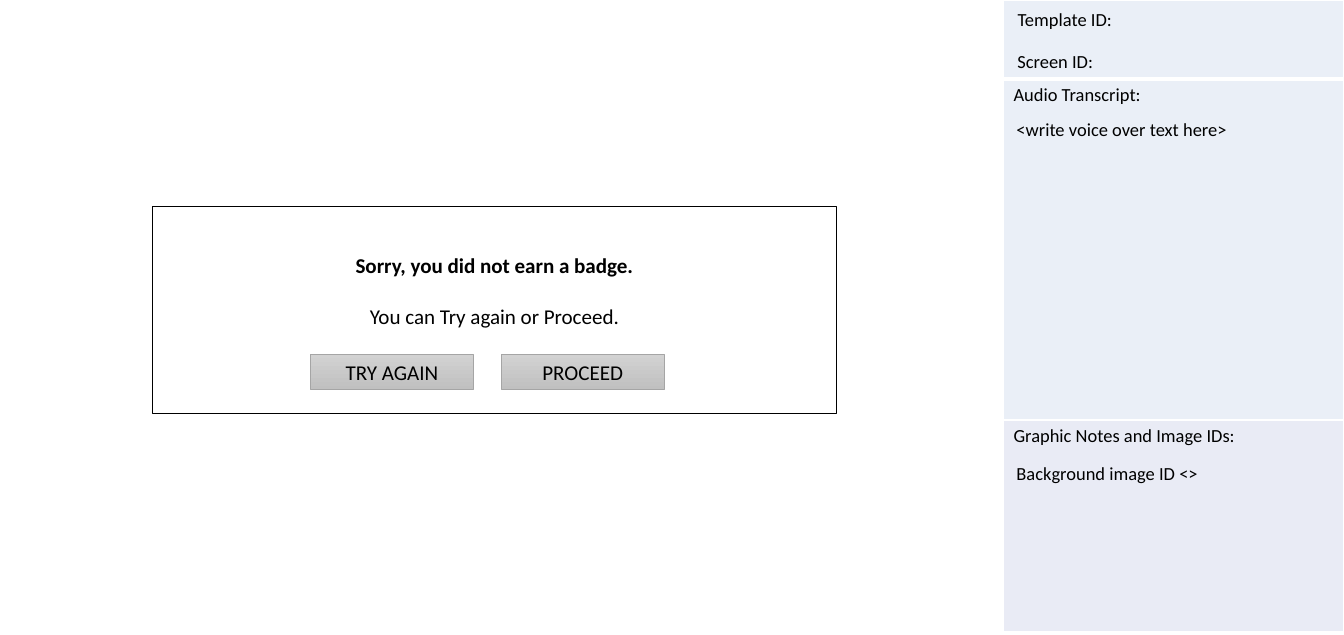
import pptx
import pptx.dml.color
import pptx.enum.shapes
import pptx.enum.text
import pptx.oxml
import pptx.oxml.ns
import pptx.util

BLACK = pptx.dml.color.RGBColor(0x00, 0x00, 0x00)
WHITE = pptx.dml.color.RGBColor(0xFF, 0xFF, 0xFF)
PALE_BLUE = pptx.dml.color.RGBColor(0xEA, 0xEF, 0xF7)
PALE_LAVENDER = pptx.dml.color.RGBColor(0xE9, 0xEB, 0xF5)
LIGHT_GREY = pptx.dml.color.RGBColor(0xD2, 0xD2, 0xD2)
MID_GREY = pptx.dml.color.RGBColor(0xC0, 0xC0, 0xC0)
EDGE_GREY = pptx.dml.color.RGBColor(0xA5, 0xA5, 0xA5)

Pt = pptx.util.Pt
CENTER = pptx.enum.text.PP_ALIGN.CENTER
TOP = pptx.enum.text.MSO_ANCHOR.TOP
MIDDLE = pptx.enum.text.MSO_ANCHOR.MIDDLE


def write_text(paragraph, text, size=14, bold=False, align=None, before=0, font="Calibri"):
    paragraph.alignment = align
    paragraph.space_before = Pt(before)
    run = paragraph.add_run()
    run.text = text
    run.font.name = font
    run.font.size = Pt(size)
    run.font.bold = bold
    run.font.color.rgb = BLACK


class Storyboard:
    text_size = 16
    label_size = 14
    border = 1

    def __init__(self, slide):
        self.slide = slide

    def label(self, text, left, top, width):
        box = self.slide.shapes.add_textbox(Pt(left), Pt(top), Pt(width), Pt(24.5))
        box.text_frame.word_wrap = True
        write_text(box.text_frame.paragraphs[0], text, size=self.label_size)

    def rectangle(self, left, top, width, height, line_color, line_width):
        shape = self.slide.shapes.add_shape(
            pptx.enum.shapes.MSO_SHAPE.RECTANGLE, Pt(left), Pt(top), Pt(width), Pt(height))
        shape.shadow.inherit = False
        shape.line.color.rgb = line_color
        shape.line.width = Pt(line_width)
        shape.text_frame.word_wrap = True
        return shape

    def message(self, left, top, width, height, heading, body):
        shape = self.rectangle(left, top, width, height, BLACK, self.border)
        shape.fill.solid()
        shape.fill.fore_color.rgb = WHITE
        frame = shape.text_frame
        frame.vertical_anchor = TOP
        frame.margin_left = frame.margin_right = frame.margin_bottom = Pt(15)
        frame.margin_top = Pt(34.6)
        write_text(frame.paragraphs[0], heading, size=self.text_size, bold=True, align=CENTER)
        write_text(frame.add_paragraph(), body, size=self.text_size, align=CENTER, before=19.5)

    def button(self, text, left, top, width, height):
        shape = self.rectangle(left, top, width, height, EDGE_GREY, 0.5)
        shape.fill.gradient()
        shape.fill.gradient_angle = 270
        for stop, color in zip(shape.fill.gradient_stops, (LIGHT_GREY, MID_GREY)):
            stop.color.rgb = color
        frame = shape.text_frame
        frame.vertical_anchor = MIDDLE
        frame.margin_left = frame.margin_right = 0
        write_text(frame.paragraphs[0], text, size=self.text_size, align=CENTER)

    def cell_borders(self, cell, widths):
        properties = cell._tc.get_or_add_tcPr()
        for side, width in zip("LRTB", widths):
            properties.append(pptx.oxml.parse_xml(
                f'<a:ln{side} {pptx.oxml.ns.nsdecls("a")} w="{Pt(width)}"><a:solidFill>'
                f'<a:srgbClr val="{WHITE}"/></a:solidFill></a:ln{side}>'))

    def side_table(self, left, top, width, rows):
        height = sum(row_height for row_height, _, _ in rows)
        table = self.slide.shapes.add_table(
            len(rows), 1, Pt(left), Pt(top), Pt(width), Pt(height)).table
        table.first_row = False
        table.horz_banding = False
        for index, (row_height, text, color) in enumerate(rows):
            table.rows[index].height = Pt(row_height)
            cell = table.cell(index, 0)
            above = 3 if index == 1 else self.border
            below = 3 if index == 0 else self.border
            self.cell_borders(cell, (self.border, self.border, above, below))
            cell.fill.solid()
            cell.fill.fore_color.rgb = color
            cell.margin_left = cell.margin_right = Pt(7.6)
            if text:
                write_text(cell.text_frame.paragraphs[0], text, size=self.label_size)


def main():
    presentation = pptx.Presentation()
    presentation.slide_width = Pt(1020.24)
    presentation.slide_height = Pt(481.68)
    storyboard = Storyboard(presentation.slides.add_slide(presentation.slide_layouts[6]))

    storyboard.side_table(761.8, 0, 258.4, (
        (59.8, "", PALE_BLUE),
        (258.8, "Audio Transcript:", PALE_BLUE),
        (160.8, "Graphic Notes and Image IDs:", PALE_LAVENDER),
    ))
    for text, left, top in (
        ("Screen ID:", 765.2, 34.6),
        ("Template ID:", 765.4, 2.9),
        ("<write voice over text here>", 764.5, 86),
        ("Background image ID <>", 764.5, 347.3),
    ):
        storyboard.label(text, left, top, 254.8)

    storyboard.message(115.8, 156.9, 519.2, 156.9,
                       "Sorry, you did not earn a badge.", "You can Try again or Proceed.")
    for index, text in enumerate(("TRY AGAIN", "PROCEED")):
        storyboard.button(text, 235.9 + index * 144.9, 268.8, 123.2, 26.7)

    presentation.save("out.pptx")


if __name__ == "__main__":
    main()
